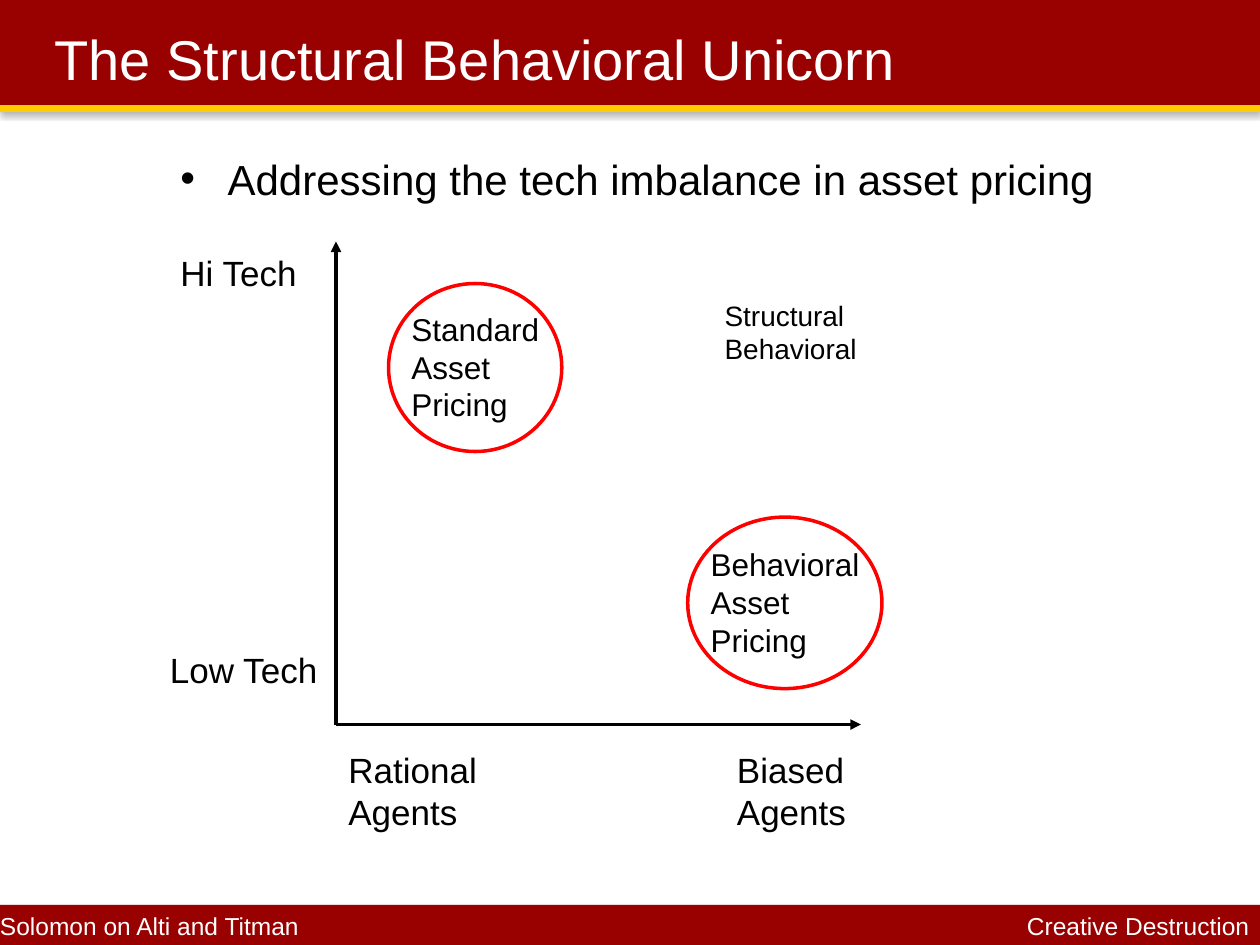
from lxml import etree
from pptx import Presentation
from pptx.dml.color import RGBColor
from pptx.enum.shapes import MSO_CONNECTOR, MSO_SHAPE
from pptx.enum.text import MSO_ANCHOR, MSO_AUTO_SIZE, PP_ALIGN
from pptx.oxml.ns import qn
from pptx.util import Pt

LEFT, RIGHT = PP_ALIGN.LEFT, PP_ALIGN.RIGHT
MIDDLE = MSO_ANCHOR.MIDDLE
NO_FIT, GROW = MSO_AUTO_SIZE.NONE, MSO_AUTO_SIZE.SHAPE_TO_FIT_TEXT
RECTANGLE, OVAL = MSO_SHAPE.RECTANGLE, MSO_SHAPE.OVAL
STRAIGHT = MSO_CONNECTOR.STRAIGHT

CARDINAL = RGBColor(0x99, 0x00, 0x00)
GOLD = RGBColor(0xFF, 0xCC, 0x00)
RED = RGBColor(0xFF, 0x00, 0x00)
BLACK = RGBColor(0x00, 0x00, 0x00)
WHITE = RGBColor(0xFF, 0xFF, 0xFF)

FONT = "Arial"
WIDTH, HEIGHT = 720, 540


def points(*lengths):
    return [Pt(length) for length in lengths]


def add_run(paragraph, text, size, color):
    run = paragraph.add_run()
    run.text = text
    run.font.name = FONT
    run.font.size = Pt(size)
    run.font.color.rgb = color


def add_label(slide, box, lines, size, color=BLACK, align=LEFT, inset=None):
    """Text box with one paragraph for each line."""
    frame = slide.shapes.add_textbox(*points(*box)).text_frame
    frame.word_wrap = True
    frame.auto_size = GROW
    if inset is not None:
        frame.margin_left = frame.margin_right = Pt(inset)
        frame.margin_top = frame.margin_bottom = Pt(inset)
    for index, line in enumerate(lines):
        paragraph = frame.add_paragraph() if index else frame.paragraphs[0]
        paragraph.alignment = align
        add_run(paragraph, line, size, color)


def add_bar(slide, box, color, opacity):
    """Plain band with a soft shadow below it."""
    bar = slide.shapes.add_shape(RECTANGLE, *points(*box))
    bar.fill.solid()
    bar.fill.fore_color.rgb = color
    bar.line.fill.background()
    bar.shadow.inherit = False
    effects = bar.element.spPr.find(qn("a:effectLst"))
    shadow = etree.SubElement(
        effects, qn("a:outerShdw"), blurRad=str(Pt(3.1)), dist=str(Pt(1.8)),
        dir="5400000", rotWithShape="0")
    shade = etree.SubElement(shadow, qn("a:srgbClr"), val="000000")
    etree.SubElement(shade, qn("a:alpha"), val=str(opacity * 1000))


def add_header(slide, box, text):
    left, top, width, height = box
    stripe_height = 4
    add_bar(slide, (left, top, width, height - stripe_height), CARDINAL, 35)
    add_bar(slide, (left, top + height - stripe_height, width, stripe_height), GOLD, 38)
    # Bring the title in front of the bands
    title = slide.shapes.title
    title.element.getparent().append(title.element)
    title.left, title.top, title.width, title.height = points(left + 24, top + 12, 648, 42)
    frame = title.text_frame
    frame.auto_size = NO_FIT
    frame.vertical_anchor = MIDDLE
    frame.paragraphs[0].alignment = LEFT
    add_run(frame.paragraphs[0], text, 32, WHITE)


def add_footer(slide, box, left_text, right_text):
    left, top, width, height = box
    add_bar(slide, box, CARDINAL, 35)
    text_top = top + 3.5
    add_label(slide, (left, text_top, 288, 17), [left_text], 14, WHITE, inset=0)
    add_label(slide, (left + width - 216, text_top, 210, 17), [right_text], 14,
              WHITE, RIGHT, inset=0)


def add_bullet_text(slide, box, text):
    frame = slide.shapes.add_textbox(*points(*box)).text_frame
    frame.word_wrap = True
    paragraph = frame.paragraphs[0]
    properties = paragraph._p.get_or_add_pPr()
    properties.set("marL", str(Pt(27)))
    properties.set("indent", str(Pt(-27)))
    etree.SubElement(properties, qn("a:buFont"), typeface=FONT)
    etree.SubElement(properties, qn("a:buChar"), char="•")
    add_run(paragraph, text, 24, BLACK)


def add_axis(slide, start, end):
    axis = slide.shapes.add_connector(STRAIGHT, *points(*start, *end))
    axis.line.color.rgb = BLACK
    axis.line.width = Pt(2)
    etree.SubElement(axis.line._get_or_add_ln(), qn("a:tailEnd"), type="triangle")
    etree.SubElement(axis.element.spPr, qn("a:effectLst"))


def add_circled_label(slide, box, lines):
    left, top, width, height = box
    circle = slide.shapes.add_shape(OVAL, *points(*box))
    circle.fill.background()
    circle.line.color.rgb = RED
    circle.line.width = Pt(2)
    circle.shadow.inherit = False
    label_height = 73
    label_top = top + (height - label_height) / 2
    add_label(slide, (left + 6, label_top, width - 6, label_height), lines, 18)


def add_quadrants(slide, box):
    """Technology against agents, with the approaches placed between the axes."""
    left, top, width, height = box
    bottom = top + height
    add_axis(slide, (left, bottom), (left, top))
    add_axis(slide, (left, bottom), (left + width, bottom))

    # Axis labels
    add_label(slide, (left - 96, top + 2, 96, 32), ["Hi Tech"], 20)
    add_label(slide, (left - 102, bottom - 47, 102, 32), ["Low Tech"], 20)
    add_label(slide, (left, bottom + 10, 90, 56), ["Rational Agents"], 20)
    add_label(slide, (left + 222, bottom + 10, 84, 56), ["Biased Agents"], 20)

    # Approaches
    add_circled_label(slide, (left + 30, top + 24, 99, 96), ["Standard Asset Pricing"])
    add_circled_label(slide, (left + 201, top + 157.5, 111, 98),
                      ["Behavioral", "Asset Pricing"])
    add_label(slide, (left + 215, top + 29, 90, 46), ["Structural Behavioral"], 16)


def main():
    presentation = Presentation()
    presentation.slide_width, presentation.slide_height = points(WIDTH, HEIGHT)
    title_only = presentation.slide_layouts[5]
    slide = presentation.slides.add_slide(title_only)

    add_footer(slide, (0, 517, WIDTH, 23), "Solomon on Alti and Titman",
               "Creative Destruction")
    add_header(slide, (0, 0, WIDTH, 64), "The Structural Behavioral Unicorn")
    add_bullet_text(slide, (96, 84, 576, 40),
                    "Addressing the tech imbalance in asset pricing")
    add_quadrants(slide, (192, 138, 300, 276))
    presentation.save("out.pptx")


if __name__ == "__main__":
    main()
